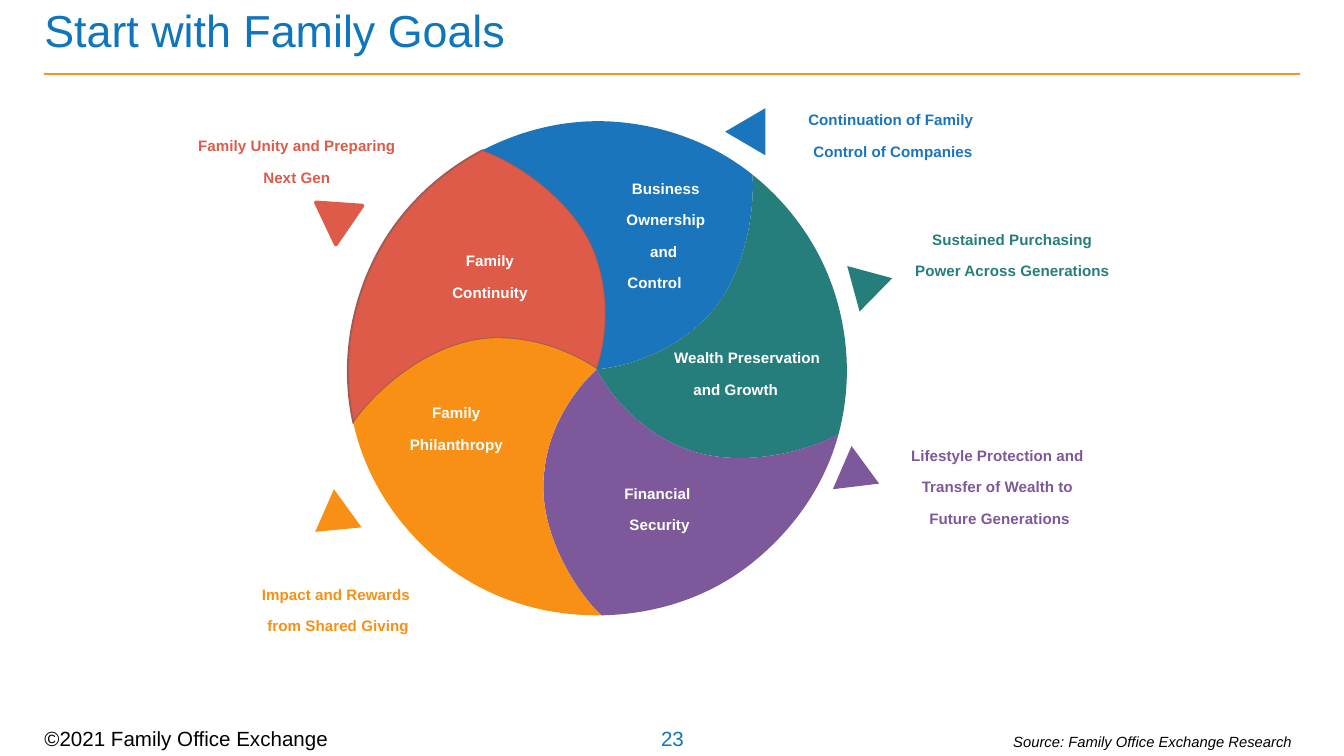
from copy import deepcopy
from math import atan2, cos, hypot, radians, sin, tan, tau

from lxml.etree import SubElement
from pptx import Presentation
from pptx.dml.color import RGBColor
from pptx.enum.shapes import MSO_CONNECTOR, MSO_SHAPE
from pptx.enum.text import MSO_ANCHOR, MSO_AUTO_SIZE, PP_ALIGN
from pptx.oxml.ns import qn
from pptx.util import Cm, Pt

BLUE, TITLE_BLUE, GREEN = "1B75BC", "0F75BC", "267E7C"
PURPLE, ORANGE, RED = "7D599B", "F79015", "DE5B49"
WHITE, BLACK, GOLD, DARK_RED = "FFFFFF", "000000", "F7941D", "A05954"

HUB = (11.28, 6.98)
WHEEL_TURN = -7.3
UNITS_PER_CM = 1000


def color(hex_code):
    return RGBColor.from_string(hex_code)


def turn(point, degrees):
    """Rotate a point clockwise about the hub."""
    angle = radians(degrees)
    x, y = point[0] - HUB[0], point[1] - HUB[1]
    return (HUB[0] + x * cos(angle) - y * sin(angle),
            HUB[1] + x * sin(angle) + y * cos(angle))


def rim_curves(start, end):
    """Clockwise arc around the hub as two cubic curves, without its first point."""
    (x1, y1), (x2, y2) = [(x - HUB[0], y - HUB[1]) for x, y in (start, end)]
    half = (atan2(y2, x2) - atan2(y1, x1)) % tau / 2
    radius = (hypot(x1, y1) + hypot(x2, y2)) / 2
    middle_angle = atan2(y1, x1) + half
    stops = [(x1, y1), (radius * cos(middle_angle), radius * sin(middle_angle)), (x2, y2)]
    pull = 4 / 3 * tan(half / 4)
    points = []
    for (ax, ay), (bx, by) in zip(stops, stops[1:]):
        points += [(ax - pull * ay, ay + pull * ax), (bx + pull * by, by - pull * bx), (bx, by)]
    return [(HUB[0] + x, HUB[1] + y) for x, y in points]


class SlideBuilder:
    font = "Arial"

    def __init__(self, page):
        self.page = page

    def paint(self, shape, fill, line=None, width=1):
        shape.shadow.inherit = False
        shape.fill.solid()
        shape.fill.fore_color.rgb = color(fill)
        if line:
            shape.line.color.rgb = color(line)
            shape.line.width = Pt(width)
        else:
            shape.line.fill.background()

    def rule(self, x1, y1, x2, y2, line):
        connector = self.page.shapes.add_connector(
            MSO_CONNECTOR.STRAIGHT, Cm(x1), Cm(y1), Cm(x2), Cm(y2))
        connector.line.color.rgb = color(line)
        connector.line.width = Pt(1)
        SubElement(connector._element.spPr, qn("a:effectLst"))

    def triangle(self, x, y, rotation, fill, line=None):
        shape = self.page.shapes.add_shape(
            MSO_SHAPE.ISOSCELES_TRIANGLE, Cm(x), Cm(y), Cm(0.89), Cm(0.76))
        shape.rotation = rotation
        self.paint(shape, fill, line, 2)

    def wedge(self, start, end, fill, line=None):
        points = ([start[0]] + rim_curves(start[0], end[0]) + end[1:] + [HUB, HUB]
                  + [HUB] + start[::-1])
        first, *others = [tuple(value * UNITS_PER_CM for value in turn(point, -WHEEL_TURN))
                          for point in points]
        builder = self.page.shapes.build_freeform(*first, scale=Cm(1) / UNITS_PER_CM)
        builder.add_line_segments(others, close=True)
        shape = builder.convert_to_shape()
        # Every three points make one cubic curve
        outline = shape._element.find(".//" + qn("a:path"))
        segments = outline.findall(qn("a:lnTo"))
        for index in range(0, len(segments), 3):
            curve = SubElement(outline, qn("a:cubicBezTo"))
            segments[index].addprevious(curve)
            for segment in segments[index:index + 3]:
                curve.append(segment[0])
                outline.remove(segment)
        # The shape turns about its own centre, so move that centre about the hub
        center = turn(((shape.left + shape.width / 2) / Cm(1),
                       (shape.top + shape.height / 2) / Cm(1)), WHEEL_TURN)
        shape.left = Cm(center[0]) - shape.width // 2
        shape.top = Cm(center[1]) - shape.height // 2
        shape.rotation = WHEEL_TURN
        self.paint(shape, fill, line)

    def text(self, content, x, y, width, height, *, size=14, fill=BLACK, bold=False,
             italic=False, raised=False, indent=0, align=PP_ALIGN.LEFT,
             anchor=MSO_ANCHOR.TOP, margins=(0, 0, 0, 0), wrap=True, grow=False):
        box = self.page.shapes.add_textbox(Cm(x), Cm(y), Cm(width), Cm(height))
        frame = box.text_frame
        frame.word_wrap = wrap
        frame.auto_size = MSO_AUTO_SIZE.SHAPE_TO_FIT_TEXT if grow else MSO_AUTO_SIZE.NONE
        frame.vertical_anchor = anchor
        (frame.margin_left, frame.margin_top,
         frame.margin_right, frame.margin_bottom) = map(Cm, margins)
        for number, paragraph in enumerate(content):
            para = frame.add_paragraph() if number else frame.paragraphs[0]
            para.alignment = align
            if indent:
                para._p.get_or_add_pPr().set("indent", str(Cm(indent)))
            for row, words in enumerate(paragraph.split("\n")):
                if row:
                    para.add_line_break()
                span = para.add_run()
                span.text = words
                span.font.name, span.font.size = self.font, Pt(size)
                span.font.bold, span.font.italic = bold, italic
                span.font.color.rgb = color(fill)
                if raised:
                    span._r.get_or_add_rPr().set("baseline", "30000")
            # Line breaks take the format of the text around them
            for line_break in para._p.findall(qn("a:br")):
                line_break.append(deepcopy(span._r.rPr))

    def label(self, content, x, y, width, height, fill, **style):
        self.text(content, x, y, width, height, fill=fill, bold=True, raised=True,
                  align=PP_ALIGN.CENTER, grow=True, **style)


def main():
    deck = Presentation()
    deck.slide_width, deck.slide_height = Cm(25.4), Cm(14.29)
    slide = SlideBuilder(deck.slides.add_slide(deck.slide_layouts[6]))

    # Header and footer
    slide.rule(0.84, 1.4, 24.56, 1.4, GOLD)
    slide.text(["23"], 12.47, 13.72, 0.48, 0.48, size=11, fill=TITLE_BLUE,
               align=PP_ALIGN.CENTER, anchor=MSO_ANCHOR.MIDDLE, wrap=False, grow=True)
    slide.text(["©2021 Family Office Exchange"], 0.84, 13.79, 6.35, 0.33, size=11,
               anchor=MSO_ANCHOR.MIDDLE, wrap=False)
    slide.text(["Start with Family Goals"], 0.84, -0.05, 20.57, 1.22, size=24,
               fill=TITLE_BLUE, anchor=MSO_ANCHOR.MIDDLE, margins=(0, 0.13, 0.25, 0.13))

    # Wheel: each spoke runs from the rim towards the hub
    spokes = [
        [(6.68, 8.0), (7.01, 7.49), (8.03, 6.5), (9.22, 6.4), (10.39, 6.32)],
        [(9.12, 2.84), (9.68, 3.02), (10.92, 3.78), (11.28, 4.88), (11.66, 6.02)],
        [(14.22, 3.3), (14.27, 3.89), (14.12, 5.33), (13.23, 6.12), (12.34, 6.93)],
        [(15.85, 8.2), (15.32, 8.51), (13.92, 8.92), (12.83, 8.43), (11.73, 7.95)],
        [(11.37, 11.63), (10.92, 11.23), (10.13, 10.03), (10.29, 8.89), (10.41, 7.72)],
    ]
    fills = [RED, BLUE, GREEN, PURPLE, ORANGE]
    for start, end, fill in zip(spokes, spokes[1:] + spokes[:1], fills):
        slide.wedge(start, end, fill, DARK_RED if fill == RED else None)

    # Labels on the wheel
    for content, *place in [
        (["Family", "Continuity"], 6.99, 4.7, 4.11, 0.79),
        (["Business", "Ownership", "and \nControl"], 10.59, 3.33, 3.56, 1.6),
        (["Financial ", "Security"], 10.8, 9.09, 2.9, 0.79),
        (["Family", "Philanthropy"], 6.48, 7.57, 3.86, 0.79),
        (["Wealth Preservation and Growth"], 12.24, 6.53, 3.33, 1.19),
    ]:
        slide.label(content, *place, WHITE, indent=0.43)

    # Goals around the wheel
    for content, *place in [
        (["Continuation of Family \nControl of Companies"], 12.24, 2.03, 9.27, 0.99, BLUE),
        (["Sustained Purchasing", "Power Across Generations"],
         16.31, 4.29, 5.64, 0.79, GREEN),
        (["Lifestyle Protection and \nTransfer of Wealth to \nFuture Generations"],
         15.04, 8.38, 7.7, 1.19, PURPLE),
        (["Impact and Rewards ", "from Shared Giving"], 3.89, 11.0, 5.0, 0.79, ORANGE),
    ]:
        slide.label(content, *place)
    slide.label(["Family Unity and Preparing Next Gen"], 3.63, 2.72, 3.96, 0.79, RED,
                anchor=MSO_ANCHOR.MIDDLE)

    # Source
    slide.text(["Source: Family Office Exchange Research"], 18.9, 13.74, 7.52, 0.58,
               size=7.9, italic=True, anchor=MSO_ANCHOR.BOTTOM,
               margins=(0.25, 0.13, 0.25, 0.13), grow=True)

    # Pointers
    slide.triangle(5.82, 9.45, 234.1, ORANGE)
    slide.triangle(5.84, 3.66, 304.3, RED, RED)
    slide.triangle(13.64, 2.11, 270, BLUE)
    slide.triangle(16.05, 4.98, 74.8, GREEN)
    slide.triangle(15.82, 8.61, 113.4, PURPLE)

    deck.save("out.pptx")


if __name__ == "__main__":
    main()
